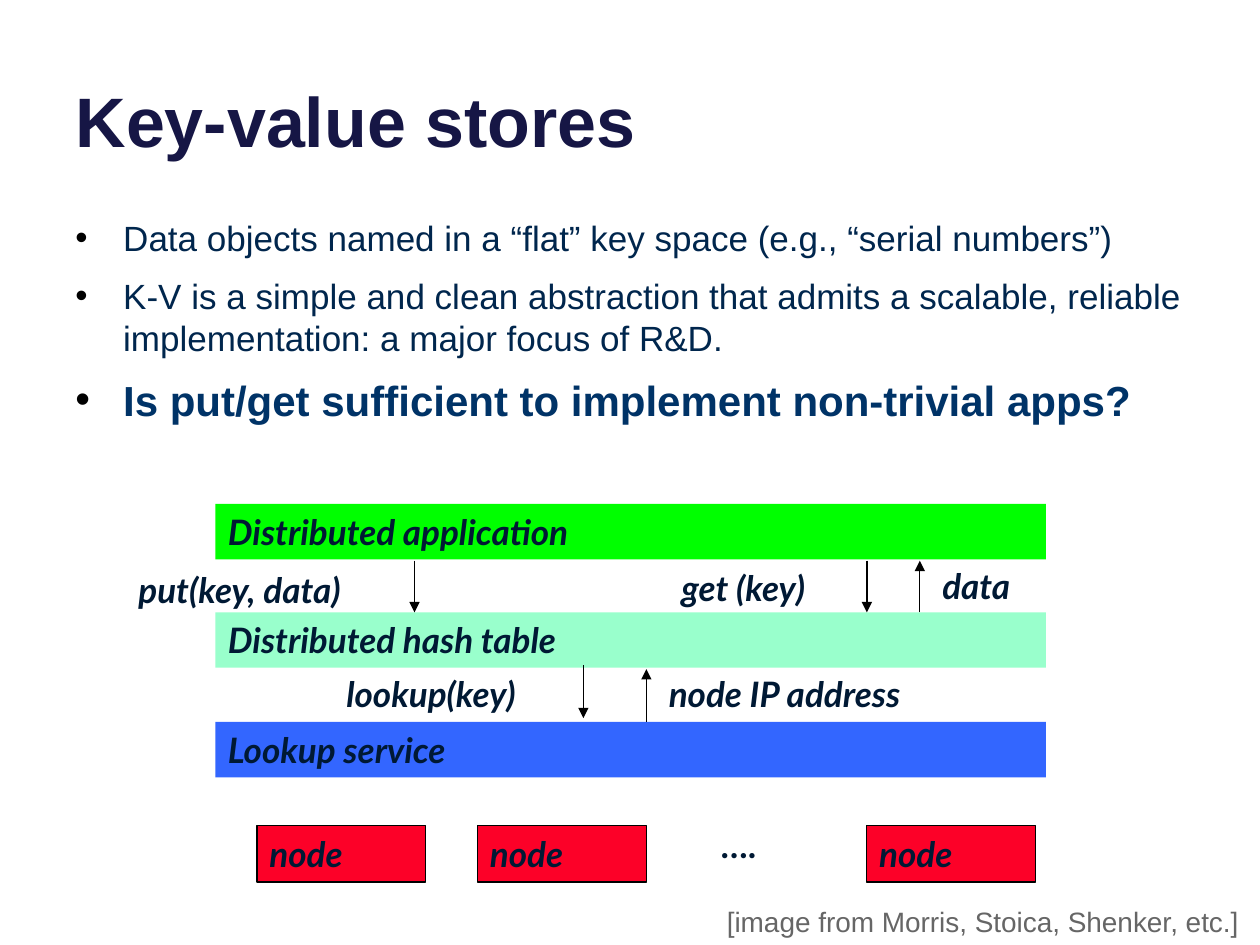
from dataclasses import dataclass

from lxml.etree import SubElement
from pptx import Presentation
from pptx.dml.color import RGBColor
from pptx.enum.shapes import MSO_CONNECTOR as Link, MSO_SHAPE as Shape
from pptx.enum.text import MSO_ANCHOR as Anchor, PP_ALIGN as Align
from pptx.oxml.ns import qn
from pptx.util import Inches, Pt

INK = "001934"
NAVY = "00264D"
BLACK = "000000"


@dataclass
class Box:
    text: str
    left: float
    top: float
    width: float
    height: float = 0.44
    fill: str = ""
    line: str = ""
    anchor: Anchor = Anchor.TOP

    def place(self) -> tuple:
        return tuple(map(Inches, (self.left, self.top, self.width, self.height)))


@dataclass
class Arrow:
    x: float
    start: float
    end: float


BAND = dict(left=1.71, width=6.59)
BANDS = [
    Box("Distributed application", top=4, fill="00FF00", **BAND),
    Box("Distributed hash table", top=4.86, fill="99FFCC", **BAND),
    Box("Lookup service", top=5.73, fill="3366FF", **BAND),
]
NODES = [
    Box("node", left, 6.55, 1.34, 0.45, "FC0128", BLACK, Anchor.MIDDLE)
    for left in (2.04, 3.79, 6.88)
]
LABELS = [
    Box("put(key, data)", 1, 4.46, 2.31),
    Box("get (key)", 5.31, 4.45, 1.58),
    Box("data", 7.38, 4.43, 0.91),
    Box("lookup(key)", 2.65, 5.29, 1.99),
    Box("node IP address", 5.21, 5.29, 2.56),
    Box("….", 5.63, 6.48, 0.57, anchor=Anchor.MIDDLE),
]
ARROWS = [
    Arrow(3.29, 4.45, 4.86),
    Arrow(6.88, 4.45, 4.86),
    Arrow(7.3, 4.86, 4.45),
    Arrow(4.63, 5.28, 5.7),
    Arrow(5.13, 5.73, 5.31),
]
POINTS = [
    ("Data objects named in a “flat” key space (e.g., “serial numbers”)", {}),
    ("K-V is a simple and clean abstraction that admits a scalable, reliable "
     "implementation: a major focus of R&D.", {}),
    ("Is put/get sufficient to implement non-trivial apps?",
     dict(size=24, color="003367", bold=True)),
]


def rgb(code: str) -> RGBColor:
    return RGBColor.from_string(code)


def write(para, text: str, size=20, font="Lato", color=INK, bold=False, italic=False):
    para.alignment = Align.LEFT
    run = para.add_run()
    run.text = text
    face = run.font
    face.size, face.name = Pt(size), font
    face.bold, face.italic = bold, italic
    face.color.rgb = rgb(color)


def add_box(slide, box: Box, **style) -> None:
    """Draw a filled rectangle, or a plain text box when there is no fill."""
    if box.fill:
        shape = slide.shapes.add_shape(Shape.RECTANGLE, *box.place())
        shape.shadow.inherit = False
        shape.fill.solid()
        shape.fill.fore_color.rgb = rgb(box.fill)
        if box.line:
            shape.line.color.rgb = rgb(box.line)
            shape.line.width = Pt(0.75)
        else:
            shape.line.fill.background()
    else:
        shape = slide.shapes.add_textbox(*box.place())
    frame = shape.text_frame
    frame.word_wrap = True
    frame.vertical_anchor = box.anchor
    write(frame.paragraphs[0], box.text, **style)


def add_arrow(slide, arrow: Arrow) -> None:
    x = Inches(arrow.x)
    link = slide.shapes.add_connector(
        Link.STRAIGHT, x, Inches(arrow.start), x, Inches(arrow.end))
    link.line.color.rgb = rgb(BLACK)
    link.line.width = Pt(0.75)
    SubElement(link.line._get_or_add_ln(), qn("a:tailEnd"), type="triangle")
    SubElement(link._element.spPr, qn("a:effectLst"))


def add_bullet(para) -> None:
    props = para._p.get_or_add_pPr()
    props.set("marL", str(Inches(0.38)))
    props.set("indent", str(-Inches(0.38)))
    color = SubElement(props, qn("a:buClr"))
    SubElement(color, qn("a:srgbClr"), val=BLACK)
    SubElement(props, qn("a:buFont"), typeface="Arial")
    SubElement(props, qn("a:buChar"), char="•")


def add_points(slide) -> None:
    area = slide.shapes.add_textbox(*map(Inches, (0.5, 1.67, 9, 2.17)))
    frame = area.text_frame
    frame.word_wrap = True
    for i, (text, style) in enumerate(POINTS):
        para = frame.add_paragraph() if i else frame.paragraphs[0]
        para.space_before = Pt(9)
        add_bullet(para)
        write(para, text, **{"font": "Arial", "color": NAVY, **style})


def add_title(slide) -> None:
    title = slide.shapes.title
    title.left, title.top, title.width, title.height = map(
        Inches, (0.5, -0.37, 9, 1.7))
    title.text_frame.vertical_anchor = Anchor.BOTTOM
    write(title.text_frame.paragraphs[0], "Key-value stores",
          size=40, font="Arial", color="161645", bold=True)


def main() -> None:
    deck = Presentation()
    deck.slide_width, deck.slide_height = Inches(10), Inches(7.5)
    slide = deck.slides.add_slide(deck.slide_layouts[5])
    add_title(slide)
    add_points(slide)
    for box in BANDS + NODES + LABELS:
        add_box(slide, box, bold=True, italic=True)
    for arrow in ARROWS:
        add_arrow(slide, arrow)
    credit = Box("[image from Morris, Stoica, Shenker, etc.]", 5.67, 7.13, 4.32, 0.37)
    add_box(slide, credit, size=16, font="Arial", color="666666")
    deck.save("out.pptx")


if __name__ == "__main__":
    main()
